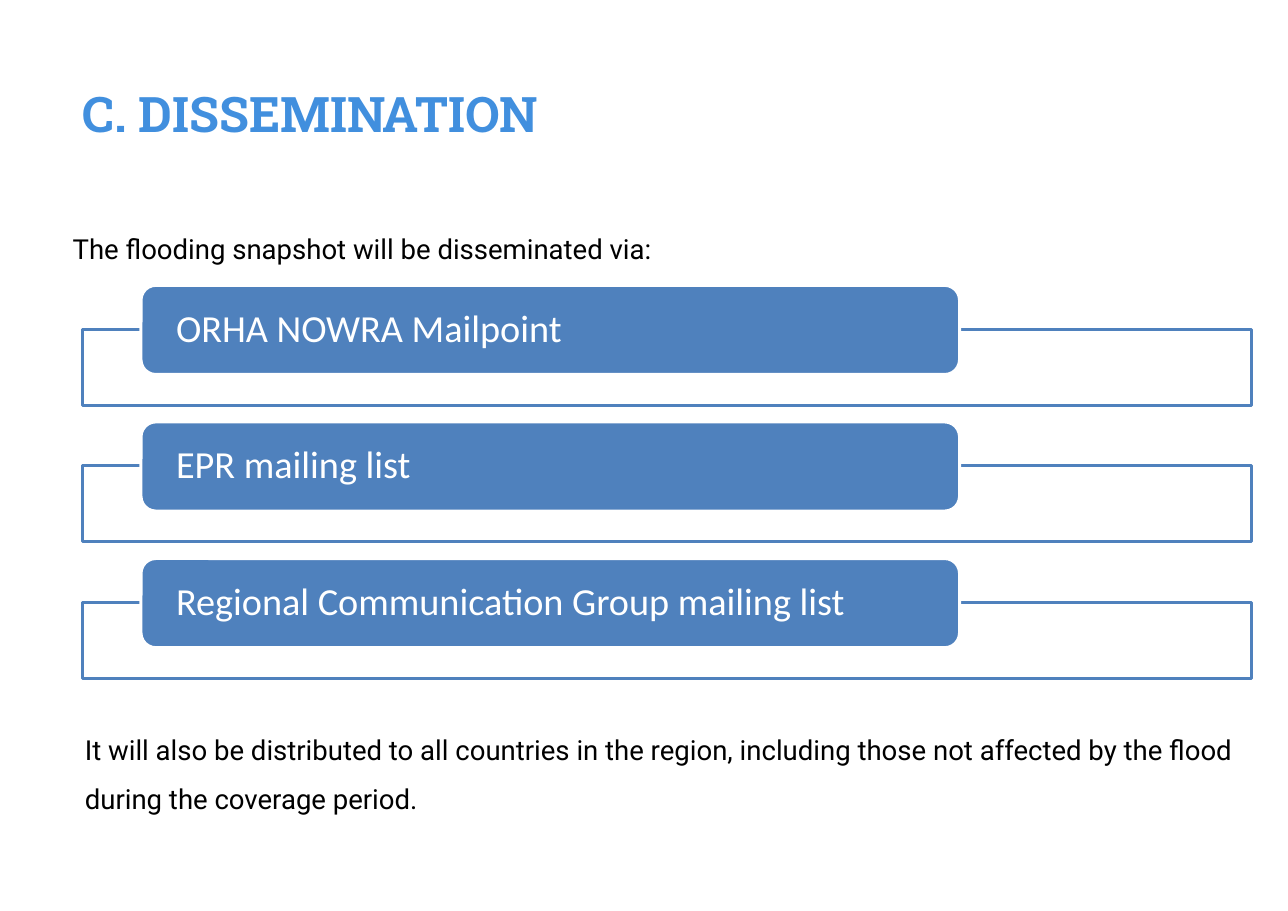
"""Build the dissemination slide with its three channels."""
import pptx
import pptx.util
import pptx.dml.color
import pptx.enum.shapes
import pptx.enum.text
import lxml.etree

Inches, Pt = pptx.util.Inches, pptx.util.Pt
SHAPE = pptx.enum.shapes.MSO_SHAPE
ANCHOR = pptx.enum.text.MSO_ANCHOR
ALIGN = pptx.enum.text.PP_ALIGN

BLUE, WHITE = "4F81BD", "FFFFFF"
TITLE = "C. DISSEMINATION"
INTRO = "The flooding snapshot will be disseminated via:"
CHANNELS = [
    "ORHA NOWRA Mailpoint",
    "EPR mailing list",
    "Regional Communication Group mailing list",
]
CLOSING = ("It will also be distributed to all countries in the region, "
           "including those not affected by the flood during the coverage period.")
FIRST_TOP, STEP, FRAME_DROP = 2.59, 1.24, 0.4


def rgb(hex_color):
    return pptx.dml.color.RGBColor.from_string(hex_color)


def write(sp, text, size, font, color, spacing, bold=False, inset=0, anchor=ANCHOR.TOP):
    tf = sp.text_frame
    tf.word_wrap = True
    tf.vertical_anchor = anchor
    tf.margin_left = tf.margin_right = Inches(inset)
    tf.margin_top = tf.margin_bottom = 0
    p = tf.paragraphs[0]
    p.alignment = ALIGN.LEFT
    p.line_spacing = spacing
    r = p.add_run()
    r.text = text
    r.font.size, r.font.name, r.font.bold = Pt(size), font, bold
    r.font.color.rgb = rgb(color)


def add_text(slide, box, *args, **kwargs):
    write(slide.shapes.add_textbox(*map(Inches, box)), *args, **kwargs)


def add_box(slide, kind, box, fill, line, alpha=100):
    sp = slide.shapes.add_shape(kind, *map(Inches, box))
    sp.shadow.inherit = False
    sp.fill.solid()
    sp.fill.fore_color.rgb = rgb(fill)
    sp.line.color.rgb = rgb(line)
    sp.line.width = Pt(2)
    if alpha < 100:
        ns = "{http://schemas.openxmlformats.org/drawingml/2006/main}"
        color = sp.element.spPr.find(f"{ns}solidFill/{ns}srgbClr")
        lxml.etree.SubElement(color, ns + "alpha", val=str(alpha * 1000))
    return sp


def main():
    prs = pptx.Presentation()
    prs.slide_width, prs.slide_height = Inches(11.69), Inches(8.27)
    slide = prs.slides.add_slide(prs.slide_layouts[6])

    add_text(slide, (0.75, 0.76, 10.22, 1), TITLE, 32, "Roboto Slab", "418FDE", 1.0, bold=True)
    for i, channel in enumerate(CHANNELS):
        top = FIRST_TOP + i * STEP
        add_box(slide, SHAPE.RECTANGLE, (0.75, top + FRAME_DROP, 10.61, 0.69), WHITE, BLUE, alpha=90)
        label = add_box(slide, SHAPE.ROUNDED_RECTANGLE, (1.28, top, 7.43, 0.81), BLUE, WHITE)
        write(label, channel, 25, "Calibri", WHITE, 0.9, inset=0.28, anchor=ANCHOR.MIDDLE)
    add_text(slide, (0.66, 1.96, 10.45, 0.4), INTRO, 18, "Roboto", "000000", 1.5)
    add_text(slide, (0.77, 6.5, 10.45, 0.86), CLOSING, 18, "Roboto", "000000", 1.5)
    prs.save("out.pptx")


if __name__ == "__main__":
    main()
